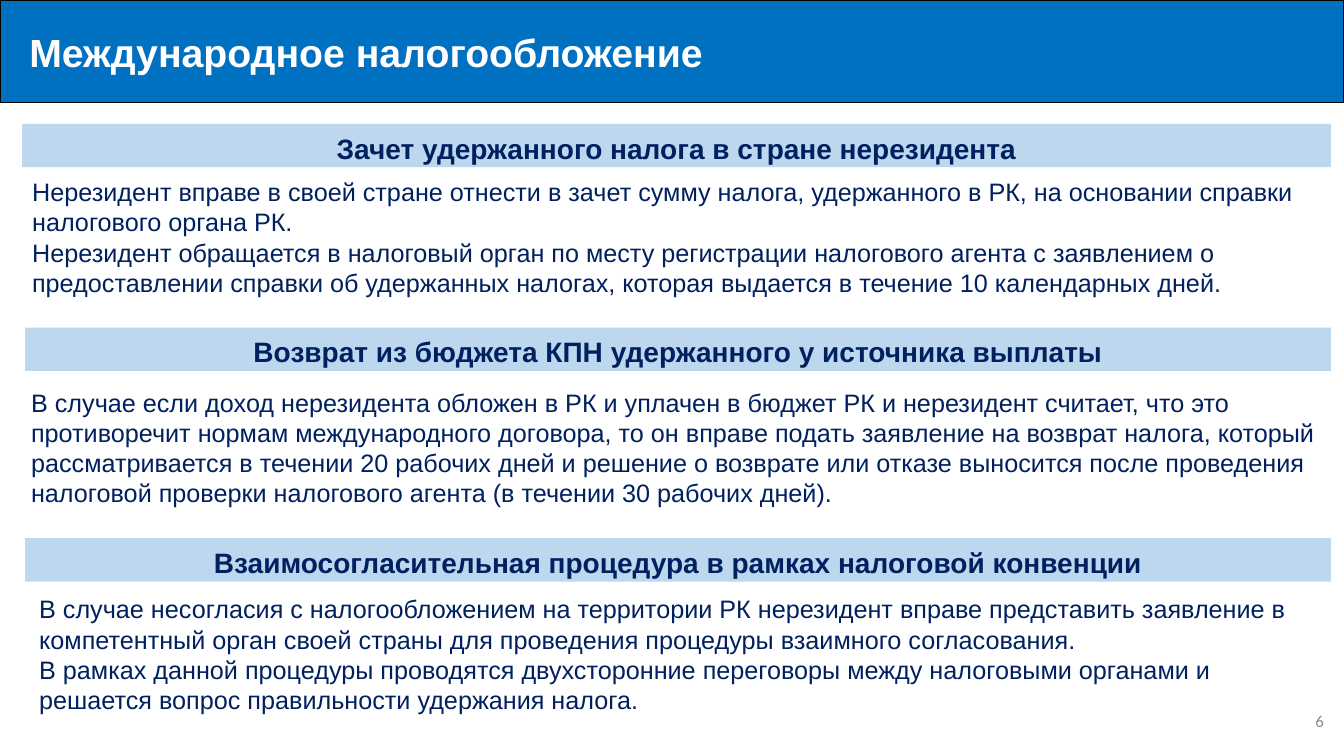
from pptx import Presentation
from pptx.dml.color import RGBColor
from pptx.enum.shapes import MSO_SHAPE
from pptx.enum.text import MSO_ANCHOR, MSO_AUTO_SIZE, PP_ALIGN
from pptx.util import Inches, Pt

BLUE = RGBColor(0x00, 0x70, 0xC0)
PALE_BLUE = RGBColor(0xBD, 0xD7, 0xEE)
NAVY = RGBColor(0x00, 0x20, 0x60)
GRAY = RGBColor(0x8C, 0x8C, 0x8C)
BLACK = RGBColor(0, 0, 0)
WHITE = RGBColor(255, 255, 255)

TITLE = "Международное налогообложение"
PAGE_NUMBER = "6"

# heading, (left, top) of its band, (left, top) of its body, body paragraphs
SECTIONS = [
    ("Зачет удержанного налога в стране нерезидента", (0.22, 1.23), (0.22, 1.7), [
        "Нерезидент вправе в своей стране отнести в зачет сумму налога, удержанного в РК, "
        "на основании справки налогового органа РК.",
        "Нерезидент обращается в налоговый орган по месту регистрации налогового агента "
        "с заявлением о предоставлении справки об удержанных налогах, которая выдается "
        "в течение 10 календарных дней.",
    ]),
    ("Возврат из бюджета КПН удержанного у источника выплаты", (0.25, 3.25), (0.21, 3.79), [
        "В случае если доход нерезидента обложен в РК и уплачен в бюджет РК и нерезидент "
        "считает, что это противоречит нормам международного договора, то он вправе подать "
        "заявление на возврат налога, который рассматривается в течении 20 рабочих дней и "
        "решение о возврате или отказе выносится после проведения налоговой проверки "
        "налогового агента (в течении 30 рабочих дней).",
    ]),
    ("Взаимосогласительная процедура в рамках налоговой конвенции", (0.25, 5.34), (0.29, 5.84), [
        "В случае несогласия с налогообложением на территории РК нерезидент вправе "
        "представить заявление в компетентный орган своей страны для проведения процедуры "
        "взаимного согласования.",
        "В рамках данной процедуры проводятся двухсторонние переговоры между налоговыми "
        "органами и решается вопрос правильности удержания налога.",
    ]),
]
BAND_RIGHT, BAND_HEIGHT = 13.2, 0.43
BODY_WIDTH, BODY_HEIGHT = 12.98, 1.31


def add_run(paragraph, text, size, color, bold=False, font_name="Arial"):
    run = paragraph.add_run()
    run.text = text
    run.font.name, run.font.size, run.font.bold = font_name, Pt(size), bold
    run.font.color.rgb = color


def add_title(slide):
    title = slide.shapes.title
    title.left, title.top = 0, 0
    title.width, title.height = Inches(13.33), Inches(1.02)
    title.fill.solid()
    title.fill.fore_color.rgb = BLUE
    title.line.color.rgb = BLACK
    title.line.width = Pt(1)
    frame = title.text_frame
    frame.auto_size = MSO_AUTO_SIZE.NONE
    frame.vertical_anchor = MSO_ANCHOR.MIDDLE
    frame.margin_left = Inches(0.29)
    frame.paragraphs[0].alignment = PP_ALIGN.LEFT
    add_run(frame.paragraphs[0], TITLE, 28, WHITE, bold=True)


def add_band(slide, heading, left, top):
    band = slide.shapes.add_shape(
        MSO_SHAPE.RECTANGLE, Inches(left), Inches(top),
        Inches(BAND_RIGHT - left), Inches(BAND_HEIGHT))
    band.shadow.inherit = False
    band.fill.solid()
    band.fill.fore_color.rgb = PALE_BLUE
    band.line.fill.background()
    frame = band.text_frame
    frame.vertical_anchor = MSO_ANCHOR.MIDDLE
    paragraph = frame.paragraphs[0]
    paragraph.alignment = PP_ALIGN.CENTER
    paragraph.line_spacing = 1.14
    add_run(paragraph, heading, 20, NAVY, bold=True)


def add_body(slide, texts, left, top):
    body = slide.shapes.add_textbox(
        Inches(left), Inches(top), Inches(BODY_WIDTH), Inches(BODY_HEIGHT))
    frame = body.text_frame
    frame.word_wrap = True
    frame.auto_size = MSO_AUTO_SIZE.SHAPE_TO_FIT_TEXT
    for index, text in enumerate(texts):
        paragraph = frame.add_paragraph() if index else frame.paragraphs[0]
        add_run(paragraph, text, 18, NAVY)


def add_page_number(slide):
    box = slide.shapes.add_textbox(Inches(10.23), Inches(6.95), Inches(3), Inches(0.4))
    frame = box.text_frame
    frame.word_wrap = True
    frame.vertical_anchor = MSO_ANCHOR.MIDDLE
    paragraph = frame.paragraphs[0]
    paragraph.alignment = PP_ALIGN.RIGHT
    add_run(paragraph, PAGE_NUMBER, 12, GRAY, font_name="Calibri")


def main():
    prs = Presentation()
    prs.slide_width, prs.slide_height = Inches(13.33), Inches(7.5)
    slide = prs.slides.add_slide(prs.slide_layouts[5])
    add_title(slide)
    for heading, band_at, body_at, texts in SECTIONS:
        add_band(slide, heading, *band_at)
        add_body(slide, texts, *body_at)
    add_page_number(slide)
    prs.save("out.pptx")


if __name__ == "__main__":
    main()
